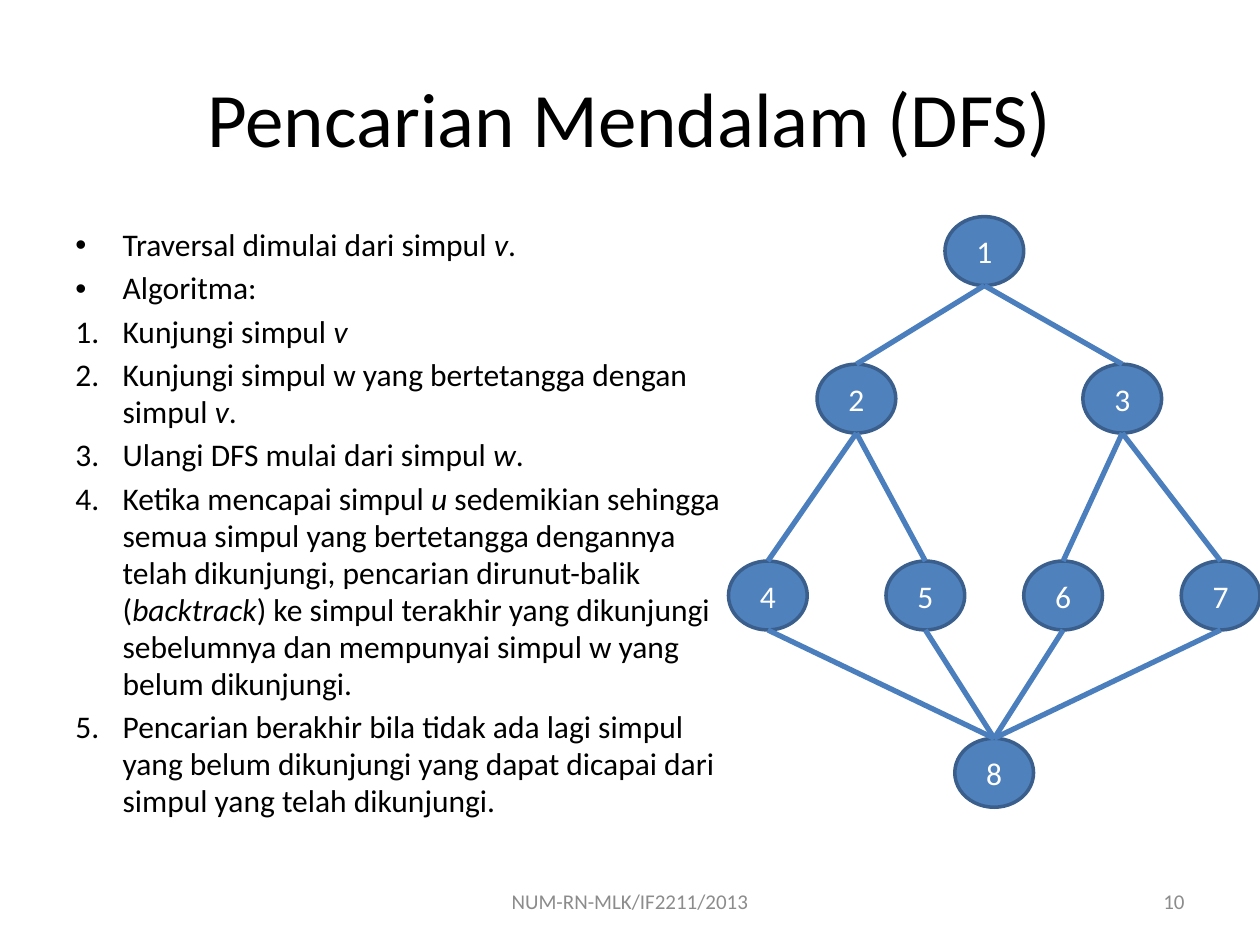
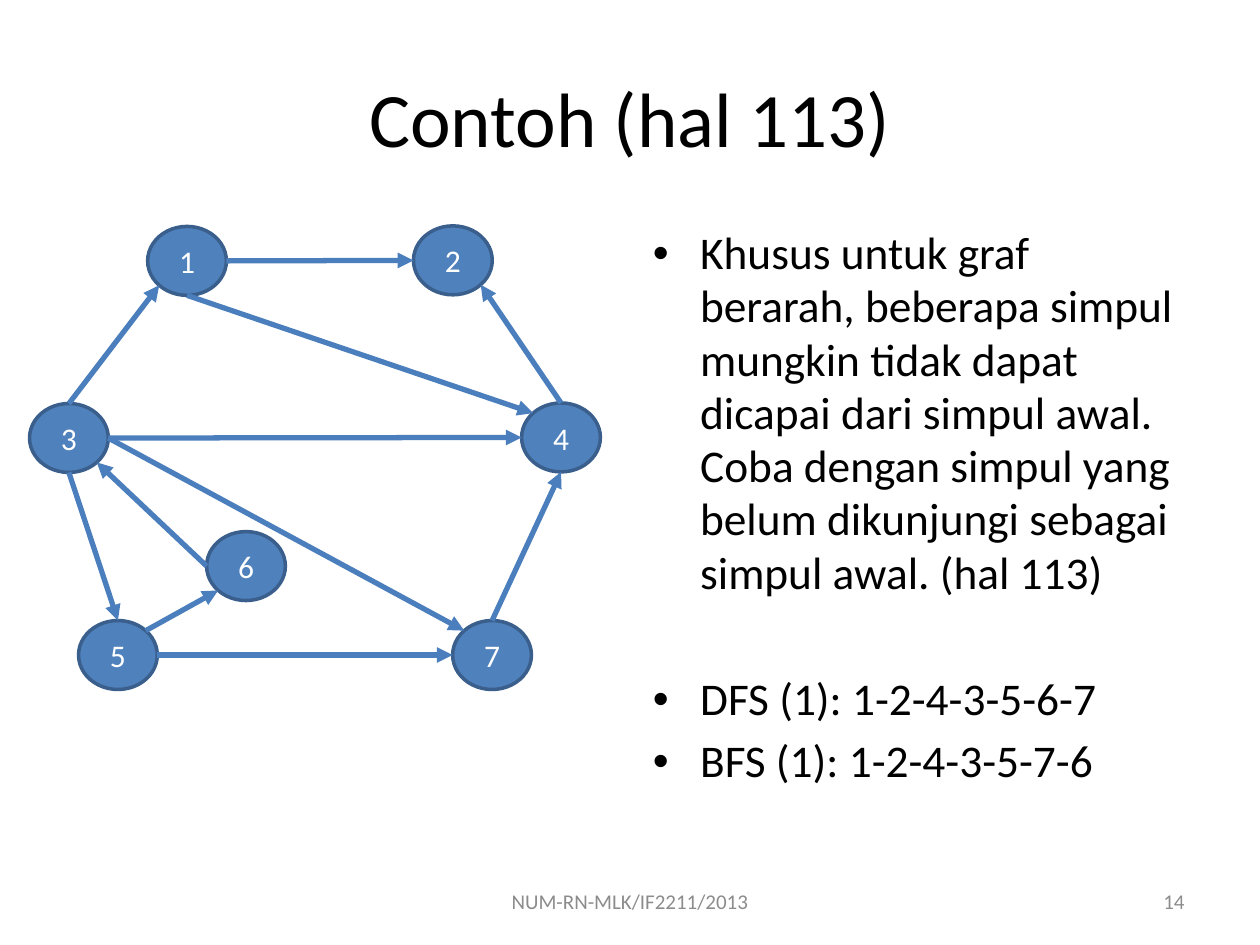
from math import sqrt

from lxml import etree
from pptx import Presentation
from pptx.dml.color import RGBColor
from pptx.enum.shapes import MSO_CONNECTOR, MSO_SHAPE
from pptx.enum.text import MSO_ANCHOR, PP_ALIGN
from pptx.oxml.ns import qn
from pptx.util import Pt

# Shared style
FONT = "Calibri"
BLACK = RGBColor(0x00, 0x00, 0x00)
WHITE = RGBColor(0xFF, 0xFF, 0xFF)
GRAY = RGBColor(0x8C, 0x8C, 0x8C)
NODE_FILL = RGBColor(0x4F, 0x81, 0xBD)
NODE_LINE = RGBColor(0x3A, 0x5F, 0x8C)
EDGE_COLOR = RGBColor(0x4B, 0x7E, 0xBC)
LEFT, CENTER, RIGHT = PP_ALIGN.LEFT, PP_ALIGN.CENTER, PP_ALIGN.RIGHT
TOP, MIDDLE = MSO_ANCHOR.TOP, MSO_ANCHOR.MIDDLE
OVAL = MSO_SHAPE.OVAL
STRAIGHT = MSO_CONNECTOR.STRAIGHT

# Boxes are left, top, width, height in points
SLIDE_WIDTH, SLIDE_HEIGHT = 720, 540
TITLE_BOX = (36, 21.6, 648, 90)
FOOTER_BOX = (246, 500.5, 228, 28.75)
NUMBER_BOX = (516, 500.5, 168, 28.75)
FOOTER = "NUM-RN-MLK/IF2211/2013"
INDENT = 27
NODE_WIDTH, NODE_HEIGHT = 45, 39.4

# Points on a node's rim, as parts of its half width and half height
DIAGONAL = 1 / sqrt(2)
RIM = {
    "top": (0, -1), "bottom": (0, 1), "left": (-1, 0), "right": (1, 0),
    "top left": (-DIAGONAL, -DIAGONAL), "top right": (DIAGONAL, -DIAGONAL),
    "bottom left": (-DIAGONAL, DIAGONAL), "bottom right": (DIAGONAL, DIAGONAL),
}

# Content: body items are (kind, text, space before), with *italic* words;
# nodes are centres; edges are (start, start side, end, end side)
BULLET, NUMBER = "bullet", "number"
TREE_LINKS = [(1, 2), (1, 3), (2, 4), (2, 5), (3, 6), (3, 7),
              (4, 8), (5, 8), (6, 8), (7, 8)]
SLIDES = [
    {
        "title": "Pencarian Mendalam (DFS)",
        "number": "10",
        "body_box": (36, 126, 386, 356.4),
        "body_size": 18,
        "body": [
            (BULLET, "Traversal dimulai dari simpul *v*.", 3.6),
            (BULLET, "Algoritma:", 3.6),
            (NUMBER, "Kunjungi simpul *v*", 3.6),
            (NUMBER, "Kunjungi simpul w yang bertetangga dengan simpul *v*.", 3.6),
            (NUMBER, "Ulangi DFS mulai dari simpul *w*.", 3.6),
            (NUMBER, "Ketika mencapai simpul *u* sedemikian sehingga semua simpul "
                     "yang bertetangga dengannya telah dikunjungi, pencarian "
                     "dirunut-balik (*backtrack*) ke simpul terakhir yang dikunjungi "
                     "sebelumnya dan mempunyai simpul w yang belum dikunjungi.", 3.6),
            (NUMBER, "Pencarian berakhir bila tidak ada lagi simpul yang belum "
                     "dikunjungi yang dapat dicapai dari simpul yang telah "
                     "dikunjungi.", 3.6),
        ],
        "nodes": {
            1: (562.5, 143.5),
            2: (489.4, 227.8), 3: (641.3, 227.8),
            4: (438.8, 340.3), 5: (528.8, 340.3), 6: (607.5, 340.3), 7: (697.5, 340.3),
            8: (568.1, 441.6),
        },
        "edges": [(start, "bottom", end, "top") for start, end in TREE_LINKS],
        "directed": False,
    },
    {
        "title": "Contoh (hal 113)",
        "number": "14",
        "body_box": (366, 126, 318, 356.4),
        "body_size": 25.9,
        "body": [
            (BULLET, "Khusus untuk graf berarah, beberapa simpul mungkin tidak dapat "
                     "dicapai dari simpul awal. Coba dengan simpul yang belum "
                     "dikunjungi sebagai simpul awal. (hal 113)", 5.2),
            (BULLET, "DFS (1): 1-2-4-3-5-6-7", 41.4),
            (BULLET, "BFS (1): 1-2-4-3-5-7-6", 5.2),
        ],
        "nodes": {
            1: (106.9, 149.1), 2: (258.8, 148.8),
            3: (39.4, 250.3), 4: (320.6, 250),
            5: (67.4, 374.3), 6: (140.6, 323.5), 7: (281.2, 374.3),
        },
        "edges": [
            (1, "right", 2, "left"), (3, "top", 1, "bottom left"),
            (3, "right", 4, "left"), (1, "bottom", 4, "top left"),
            (4, "top", 2, "bottom right"), (3, "bottom", 5, "top"),
            (5, "top right", 6, "bottom left"), (6, "left", 3, "bottom right"),
            (5, "right", 7, "left"), (3, "right", 7, "top left"),
            (7, "top", 4, "bottom"),
        ],
        "directed": True,
    },
]


def points(values):
    return [Pt(value) for value in values]


def style_paragraph(paragraph, size, color, alignment):
    paragraph.alignment = alignment
    font = paragraph.font
    font.name, font.size = FONT, Pt(size)
    font.color.rgb = color


def add_text_frame(slide, box, anchor):
    frame = slide.shapes.add_textbox(*points(box)).text_frame
    frame.word_wrap = True
    frame.vertical_anchor = anchor
    return frame


def add_line_of_text(slide, box, text, size, color, alignment):
    paragraph = add_text_frame(slide, box, MIDDLE).paragraphs[0]
    paragraph.text = text
    style_paragraph(paragraph, size, color, alignment)


def set_marker(paragraph, kind):
    properties = paragraph._p.get_or_add_pPr()
    properties.set("marL", str(Pt(INDENT)))
    properties.set("indent", str(-Pt(INDENT)))
    if kind == BULLET:
        etree.SubElement(properties, qn("a:buFont"), typeface="Arial")
        marker = etree.SubElement(properties, qn("a:buChar"), char="•")
    else:
        marker = etree.SubElement(properties, qn("a:buAutoNum"), type="arabicPeriod")
    # Markers come before the default run properties
    defaults = properties.find(qn("a:defRPr"))
    if defaults is not None:
        marker.addnext(defaults)


def add_body(slide, box, size, items):
    frame = add_text_frame(slide, box, TOP)
    for index, (kind, text, space_before) in enumerate(items):
        paragraph = frame.add_paragraph() if index else frame.paragraphs[0]
        for part_index, part in enumerate(text.split("*")):
            if part:
                run = paragraph.add_run()
                run.text = part
                if part_index % 2:
                    run.font.italic = True
        paragraph.space_before = Pt(space_before)
        paragraph.line_spacing = 0.98
        style_paragraph(paragraph, size, BLACK, LEFT)
        set_marker(paragraph, kind)


def add_node(slide, label, center):
    x, y = center
    box = (x - NODE_WIDTH / 2, y - NODE_HEIGHT / 2, NODE_WIDTH, NODE_HEIGHT)
    node = slide.shapes.add_shape(OVAL, *points(box))
    node.shadow.inherit = False
    node.fill.solid()
    node.fill.fore_color.rgb = NODE_FILL
    node.line.color.rgb = NODE_LINE
    node.line.width = Pt(2)
    node.text_frame.vertical_anchor = MIDDLE
    paragraph = node.text_frame.paragraphs[0]
    paragraph.text = str(label)
    style_paragraph(paragraph, 18, WHITE, CENTER)


def rim_point(center, side):
    across, down = RIM[side]
    return center[0] + across * NODE_WIDTH / 2, center[1] + down * NODE_HEIGHT / 2


def add_edge(slide, start, end, directed):
    edge = slide.shapes.add_connector(STRAIGHT, *points(start + end))
    edge.line.color.rgb = EDGE_COLOR
    edge.line.width = Pt(3)
    if directed:
        etree.SubElement(edge.line._get_or_add_ln(), qn("a:tailEnd"), type="triangle")
    etree.SubElement(edge._element.spPr, qn("a:effectLst"))


def add_graph(slide, nodes, edges, directed):
    for label, center in nodes.items():
        add_node(slide, label, center)
    for start, start_side, end, end_side in edges:
        add_edge(slide, rim_point(nodes[start], start_side),
                 rim_point(nodes[end], end_side), directed)


def main():
    presentation = Presentation()
    presentation.slide_width, presentation.slide_height = Pt(SLIDE_WIDTH), Pt(SLIDE_HEIGHT)
    blank = presentation.slide_layouts[6]
    for content in SLIDES:
        slide = presentation.slides.add_slide(blank)
        add_line_of_text(slide, TITLE_BOX, content["title"], 44, BLACK, CENTER)
        add_body(slide, content["body_box"], content["body_size"], content["body"])
        add_graph(slide, content["nodes"], content["edges"], content["directed"])
        add_line_of_text(slide, NUMBER_BOX, content["number"], 12, GRAY, RIGHT)
        add_line_of_text(slide, FOOTER_BOX, FOOTER, 12, GRAY, CENTER)
    presentation.save("out.pptx")


if __name__ == "__main__":
    main()
